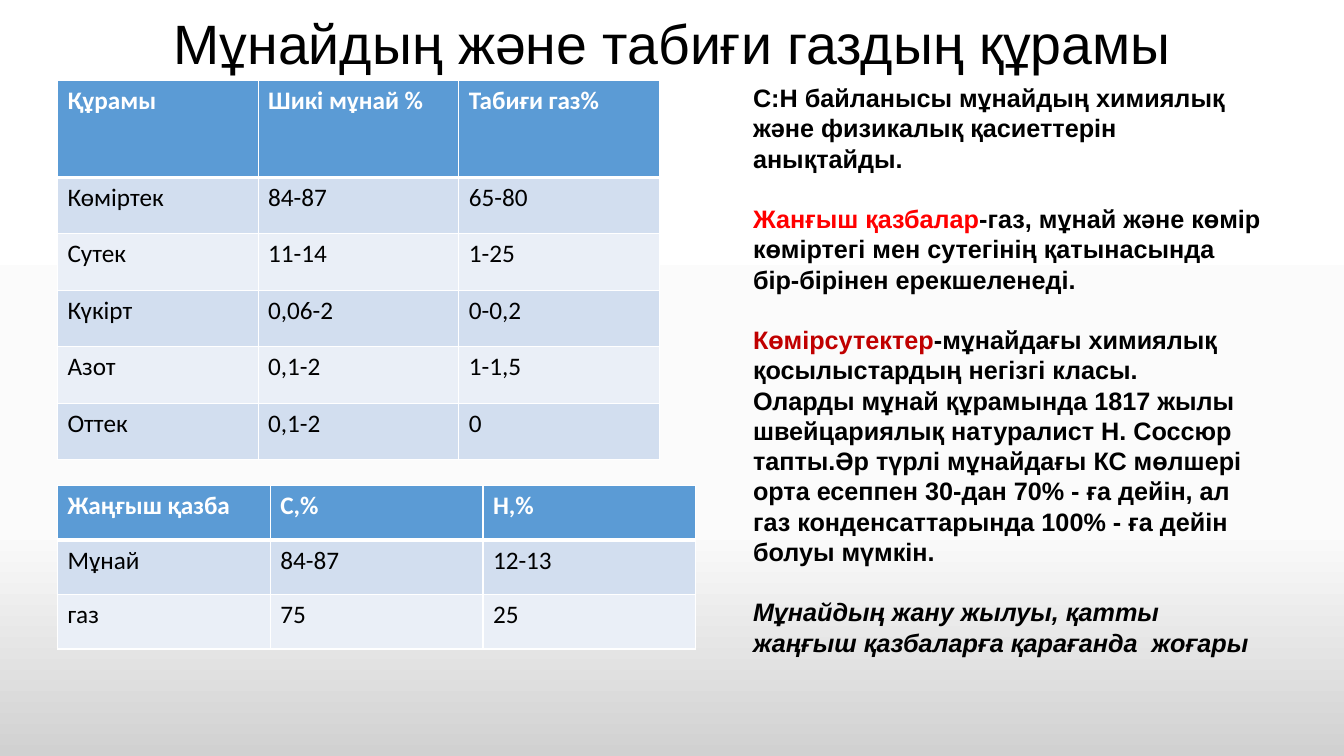
import copy
from dataclasses import dataclass, field

import pptx
import pptx.dml.color
import pptx.enum.text
import pptx.oxml
import pptx.oxml.ns
import pptx.slide
import pptx.util

PX = 9144


@dataclass(frozen=True)
class Theme:
    sans: str = "Arial"
    grid: str = "Calibri"
    head: float = 39.6
    text: float = 18
    black: str = "000000"
    white: str = "FFFFFF"
    red: str = "FF0000"
    dark: str = "C00000"
    blue: str = "5B9BD5"
    bands: tuple[str, str] = ("D2DEEF", "EAEFF7")
    back: tuple[tuple[float, str], ...] = ((0, "FFFFFF"), (0.7, "FBFBFB"), (1, "D1D1D1"))


@dataclass(frozen=True)
class Grid:
    left: int
    top: int
    width: int
    first: int
    height: int
    rows: list[list[str]]


@dataclass(frozen=True)
class Para:
    text: str
    lead: str = ""
    tint: str = ""
    gap: float = 21.6
    form: dict = field(default_factory=dict)


THEME = Theme()

GRIDS = [
    Grid(57, 482, 211, 54, 54, [
        ["Жаңғыш қазба", "С,%", "Н,%"],
        ["Мұнай", "84-87", "12-13"],
        ["газ", "75", "25"],
    ]),
    Grid(57, 80, 199, 96, 56, [
        ["Құрамы", "Шикі мұнай %", "Табиғи газ%"],
        ["Көміртек", "84-87", "65-80"],
        ["Сутек", "11-14", "1-25"],
        ["Күкірт", "0,06-2", "0-0,2"],
        ["Азот", "0,1-2", "1-1,5"],
        ["Оттек", "0,1-2", "0"],
    ]),
]

PARAS = [
    Para("С:Н байланысы мұнайдың химиялық және физикалық қасиеттерін анықтайды.", gap=0),
    Para("-газ, мұнай және көмір көміртегі мен сутегінің қатынасында бір-бірінен ерекшеленеді.",
         "Жанғыш қазбалар", THEME.red),
    Para("-мұнайдағы химиялық қосылыстардың негізгі класы.", "Көмірсутектер", THEME.dark),
    Para("Оларды мұнай құрамында 1817 жылы швейцариялық натуралист Н. Соссюр тапты."
         "Әр түрлі мұнайдағы КС мөлшері орта есеппен 30-дан 70% - ға дейін, ал "
         "газ конденсаттарында 100% - ға дейін болуы мүмкін.", gap=0),
    Para("Мұнайдың жану жылуы, қатты жаңғыш қазбаларға қарағанда  жоғары", form={"italic": True}),
]


def px(*nums: int) -> list[int]:
    return [num * PX for num in nums]


def tone(code: str) -> pptx.dml.color.RGBColor:
    return pptx.dml.color.RGBColor.from_string(code)


def apply(item: object, form: dict) -> None:
    for key, val in form.items():
        setattr(item, key, val)


def style(font, face: str, size: float, tint: str, **form: bool) -> None:
    apply(font, {"name": face, "size": pptx.util.Pt(size), **form})
    font.color.rgb = tone(tint)


def paint(slide: pptx.slide.Slide) -> None:
    fill = slide.background.fill
    fill.gradient()
    fill.gradient_angle = 270
    stops = slide.element.find(".//" + pptx.oxml.ns.qn("a:gsLst"))
    stops.append(copy.deepcopy(stops[-1]))
    for stop, (place, code) in zip(fill.gradient_stops, THEME.back):
        stop.color.rgb = tone(code)
        stop.position = place


def add_head(slide: pptx.slide.Slide, text: str) -> None:
    head = slide.shapes.title
    apply(head, dict(zip(("left", "top", "width", "height"), px(92, 16, 1150, 102))))
    frame = head.text_frame
    apply(frame, {"text": text, "margin_top": 0, "word_wrap": True,
                  "vertical_anchor": pptx.enum.text.MSO_ANCHOR.TOP})
    para = frame.paragraphs[0]
    apply(para, {"alignment": pptx.enum.text.PP_ALIGN.CENTER, "line_spacing": 0.9})
    style(para.runs[0].font, THEME.sans, THEME.head, THEME.black)


def edge(cell, base: int) -> None:
    props = cell._tc.get_or_add_tcPr()
    sides = {"L": 1, "R": 1, "T": 1, "B": base}
    for spot, (side, size) in enumerate(sides.items()):
        line = pptx.oxml.parse_xml(
            f'<a:ln{side} {pptx.oxml.ns.nsdecls("a")} w="{pptx.util.Pt(size)}"><a:solidFill>'
            f'<a:srgbClr val="{THEME.white}"/></a:solidFill></a:ln{side}>')
        props.insert(spot, line)


def add_grid(slide: pptx.slide.Slide, grid: Grid) -> None:
    count, cols = len(grid.rows), len(grid.rows[0])
    tall = grid.first + grid.height * (count - 1)
    box = px(grid.left, grid.top, grid.width * cols, tall)
    table = slide.shapes.add_table(count, cols, *box).table
    for col in table.columns:
        col.width = grid.width * PX
    for row, texts in enumerate(grid.rows):
        top = row == 0
        table.rows[row].height = (grid.first if top else grid.height) * PX
        for col, text in enumerate(texts):
            cell = table.cell(row, col)
            cell.text = text
            cell.fill.solid()
            cell.fill.fore_color.rgb = tone(THEME.blue if top else THEME.bands[(row - 1) % 2])
            edge(cell, 3 if top else 1)
            style(cell.text_frame.paragraphs[0].runs[0].font, THEME.grid, THEME.text,
                  THEME.white if top else THEME.black, bold=top)


def add_notes(slide: pptx.slide.Slide, paras: list[Para]) -> None:
    frame = slide.shapes.add_textbox(*px(737, 77, 529, 616)).text_frame
    apply(frame, {"word_wrap": True,
                  "auto_size": pptx.enum.text.MSO_AUTO_SIZE.SHAPE_TO_FIT_TEXT})
    for spot, item in enumerate(paras):
        para = frame.add_paragraph() if spot else frame.paragraphs[0]
        para.space_before = pptx.util.Pt(item.gap)
        for text, tint in ((item.lead, item.tint), (item.text, THEME.black)):
            if text:
                run = para.add_run()
                run.text = text
                style(run.font, THEME.sans, THEME.text, tint, bold=True, **item.form)


def main() -> None:
    deck = pptx.Presentation()
    apply(deck, dict(zip(("slide_width", "slide_height"), px(1333, 750))))
    slide = deck.slides.add_slide(deck.slide_layouts.get_by_name("Title Only"))
    paint(slide)
    add_head(slide, "Мұнайдың және табиғи газдың құрамы")
    add_notes(slide, PARAS)
    for grid in GRIDS:
        add_grid(slide, grid)
    deck.save("out.pptx")


if __name__ == "__main__":
    main()
